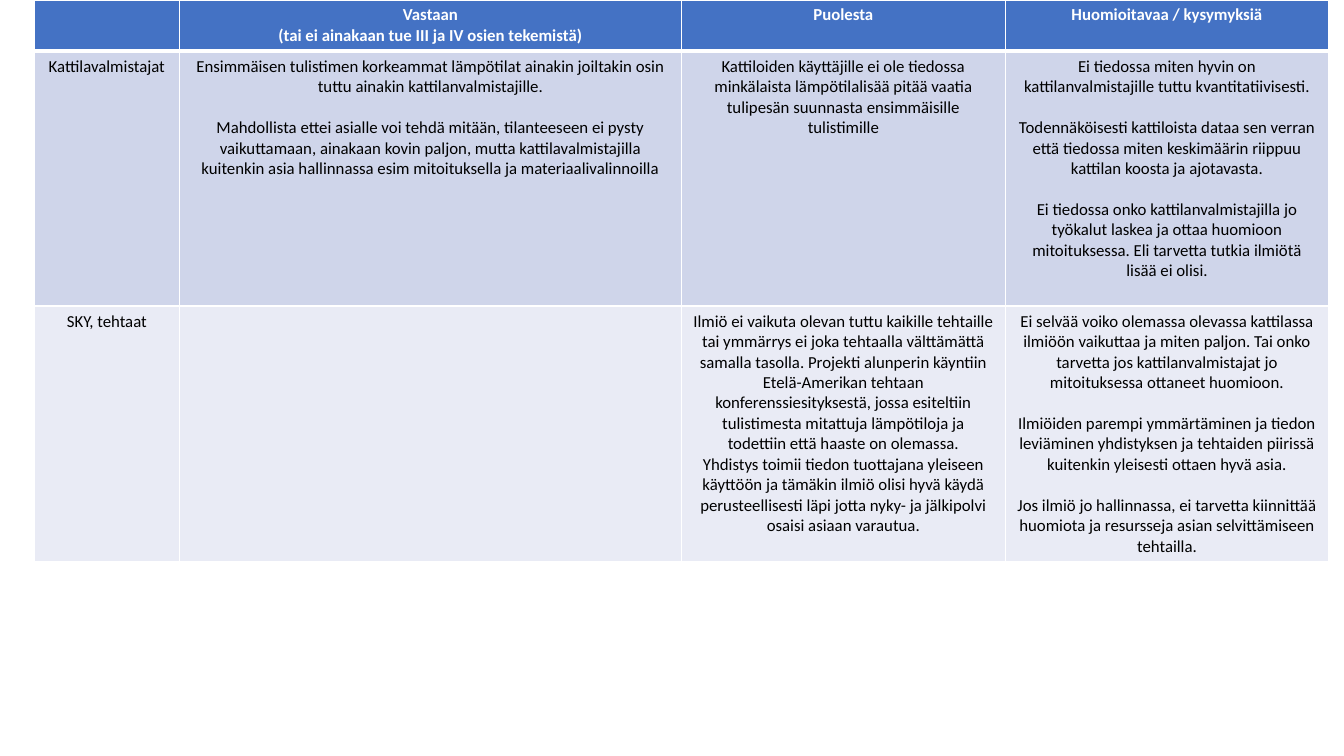
from lxml.etree import SubElement
from pptx import Presentation
from pptx.dml.color import RGBColor
from pptx.enum.text import PP_ALIGN
from pptx.oxml.ns import qn
from pptx.util import Inches, Pt

WIDTH, HEIGHT = 13.33, 7.5
TABLE_BOX = (0.34, 0, 12.84, 5.56)
COLUMN_WIDTHS = (1.44, 4.98, 3.21, 3.21)
ROW_HEIGHTS = (0.5, 2.53, 2.53)
ROW_FILLS = ("4472C4", "CFD5EA", "E9EBF5")
WHITE, BLACK = "FFFFFF", "000000"
LINE_GAP = 14.65

ROWS = (
    (
        (),
        ("Vastaan\n(tai ei ainakaan tue III ja IV osien tekemistä)",),
        ("Puolesta",),
        ("Huomioitavaa / kysymyksiä",),
    ),
    (
        ("Kattilavalmistajat",),
        (
            "Ensimmäisen tulistimen korkeammat lämpötilat ainakin joiltakin osin "
            "tuttu ainakin kattilanvalmistajille.",
            "Mahdollista ettei asialle voi tehdä mitään, tilanteeseen ei pysty "
            "vaikuttamaan, ainakaan kovin paljon, mutta kattilavalmistajilla "
            "kuitenkin asia hallinnassa esim mitoituksella ja materiaalivalinnoilla",
        ),
        (
            "Kattiloiden käyttäjille ei ole tiedossa minkälaista lämpötilalisää "
            "pitää vaatia tulipesän suunnasta ensimmäisille tulistimille",
        ),
        (
            "Ei tiedossa miten hyvin on kattilanvalmistajille tuttu kvantitatiivisesti.",
            "Todennäköisesti kattiloista dataa sen verran että tiedossa miten "
            "keskimäärin riippuu kattilan koosta ja ajotavasta.",
            "Ei tiedossa onko kattilanvalmistajilla jo työkalut laskea ja ottaa "
            "huomioon mitoituksessa. Eli tarvetta tutkia ilmiötä lisää ei olisi.",
        ),
    ),
    (
        ("SKY, tehtaat",),
        (),
        (
            "Ilmiö ei vaikuta olevan tuttu kaikille tehtaille tai ymmärrys ei joka "
            "tehtaalla välttämättä samalla tasolla. Projekti alunperin käyntiin "
            "Etelä-Amerikan tehtaan konferenssiesityksestä, jossa esiteltiin "
            "tulistimesta mitattuja lämpötiloja ja todettiin että haaste on olemassa.\n"
            "Yhdistys toimii tiedon tuottajana yleiseen käyttöön ja tämäkin ilmiö "
            "olisi hyvä käydä perusteellisesti läpi jotta nyky- ja jälkipolvi "
            "osaisi asiaan varautua.",
        ),
        (
            "Ei selvää voiko olemassa olevassa kattilassa ilmiöön vaikuttaa ja "
            "miten paljon. Tai onko tarvetta jos kattilanvalmistajat jo "
            "mitoituksessa ottaneet huomioon.",
            "Ilmiöiden parempi ymmärtäminen ja tiedon leviäminen yhdistyksen ja "
            "tehtaiden piirissä kuitenkin yleisesti ottaen hyvä asia.",
            "Jos ilmiö jo hallinnassa, ei tarvetta kiinnittää huomiota ja "
            "resursseja asian selvittämiseen tehtailla.",
        ),
    ),
)


def rgb(value):
    """Turn a hex string into a colour."""
    return RGBColor.from_string(value)


def set_borders(cell, top, bottom):
    """Draw white borders with the given top and bottom widths."""
    tc_pr = cell._tc.get_or_add_tcPr()
    for side, width in (("L", 1), ("R", 1), ("T", top), ("B", bottom)):
        ln = SubElement(tc_pr, qn(f"a:ln{side}"), w=str(Pt(width)))
        fill = SubElement(ln, qn("a:solidFill"))
        SubElement(fill, qn("a:srgbClr"), val=WHITE)


def write_blocks(tf, blocks, color, bold):
    """Write centred blocks of lines, one line height apart."""
    lines = [
        (text, LINE_GAP if i and not j else 0)
        for i, block in enumerate(blocks)
        for j, text in enumerate(block.split("\n"))
    ]
    for n, (text, gap) in enumerate(lines):
        p = tf.add_paragraph() if n else tf.paragraphs[0]
        p.alignment = PP_ALIGN.CENTER
        if gap:
            p.space_before = Pt(gap)
        r = p.add_run()
        r.text = text
        r.font.name, r.font.size, r.font.bold = "Calibri", Pt(12), bold
        r.font.color.rgb = rgb(color)


def add_argument_table(s, box):
    """Place the table of arguments in the given box."""
    frame = s.shapes.add_table(len(ROWS), len(COLUMN_WIDTHS), *map(Inches, box))
    table = frame.table
    for column, width in zip(table.columns, COLUMN_WIDTHS):
        column.width = Inches(width)
    for i, (row, height) in enumerate(zip(table.rows, ROW_HEIGHTS)):
        row.height = Inches(height)
        header = i == 0
        for cell, blocks in zip(row.cells, ROWS[i]):
            set_borders(cell, 3 if i == 1 else 1, 3 if header else 1)
            cell.fill.solid()
            cell.fill.fore_color.rgb = rgb(ROW_FILLS[i])
            write_blocks(cell.text_frame, blocks, WHITE if header else BLACK, header)


def main():
    """Build and save the presentation."""
    prs = Presentation()
    prs.slide_width, prs.slide_height = Inches(WIDTH), Inches(HEIGHT)
    s = prs.slides.add_slide(prs.slide_layouts[6])
    add_argument_table(s, TABLE_BOX)
    prs.save("out.pptx")


if __name__ == "__main__":
    main()
